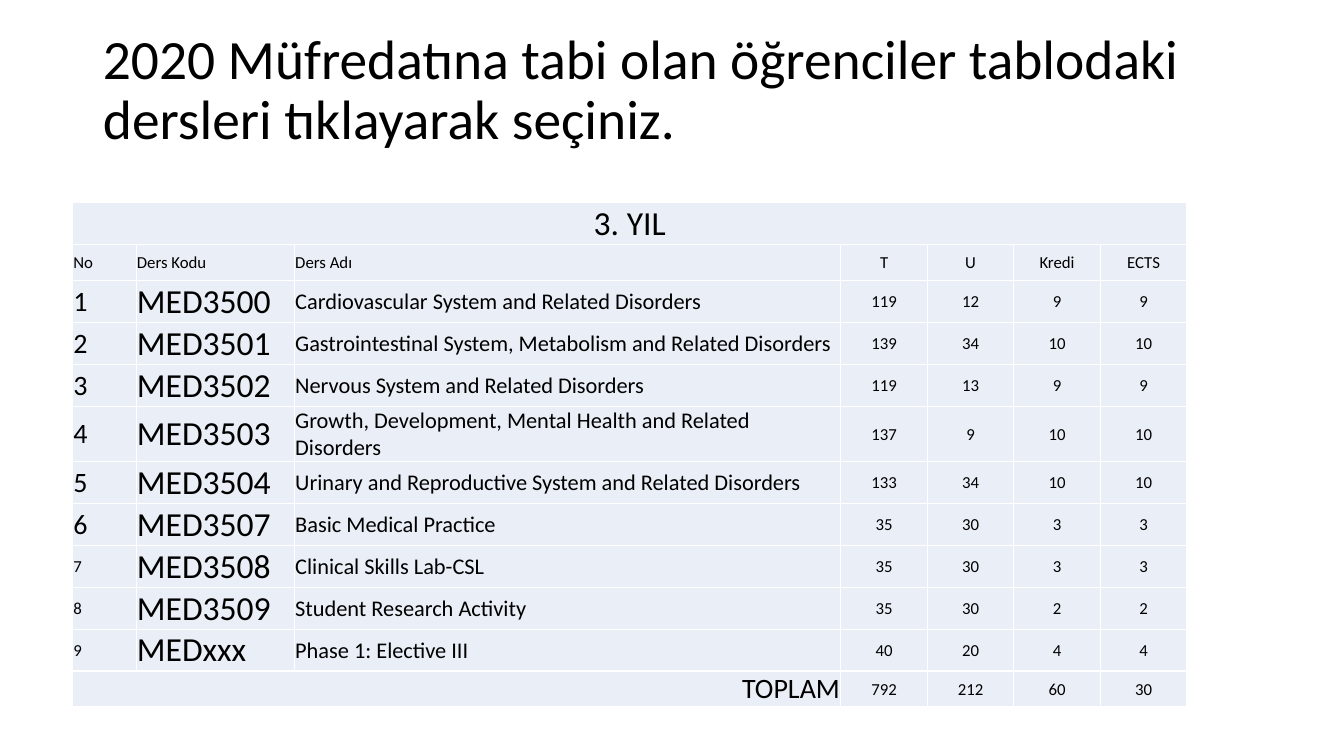
from pptx import Presentation
from pptx.dml.color import RGBColor
from pptx.enum.text import MSO_ANCHOR as ANCHOR, MSO_AUTO_SIZE as AUTO, PP_ALIGN as ALIGN
from pptx.oxml import parse_xml
from pptx.util import Cm, Pt

NS = "http://schemas.openxmlformats.org/drawingml/2006/main"

TITLE = "2020 Müfredatına tabi olan öğrenciler tablodaki dersleri tıklayarak seçiniz."
HEADER = ["No", "Ders Kodu", "Ders Adı", "T", "U", "Kredi", "ECTS"]
COURSES = [
    ("MED3500", "Cardiovascular System and Related Disorders", 119, 12, 9, 9),
    ("MED3501", "Gastrointestinal System, Metabolism and Related Disorders", 139, 34, 10, 10),
    ("MED3502", "Nervous System and Related Disorders", 119, 13, 9, 9),
    ("MED3503", "Growth, Development, Mental Health and Related Disorders", 137, 9, 10, 10),
    ("MED3504", "Urinary and Reproductive System and Related Disorders", 133, 34, 10, 10),
    ("MED3507", "Basic Medical Practice", 35, 30, 3, 3),
    ("MED3508", "Clinical Skills Lab-CSL", 35, 30, 3, 3),
    ("MED3509", "Student Research Activity", 35, 30, 2, 2),
    ("MEDxxx", "Phase 1: Elective III", 40, 20, 4, 4),
]
TOTALS = ["TOPLAM", "", "", 792, 212, 60, 30]
COL_WIDTHS = [1.6, 3.99, 13.77] + [2.18] * 4
ROW_HEIGHT = 0.91
SMALL = 12


def rgb(color):
    return RGBColor.from_string(color)


class SlideBuilder:
    font, ink, fill, border = "Calibri", "000000", "EAEFF7", "FFFFFF"

    def __init__(self, slide):
        self.s = slide

    def text(self, tf, text, size, align=ALIGN.LEFT):
        p = tf.paragraphs[0]
        p.text = str(text)
        p.alignment = align
        p.font.name = self.font
        p.font.size = Pt(size)
        p.font.color.rgb = rgb(self.ink)
        return p

    def title(self, text, left, top, width, height, size):
        sp = self.s.shapes.title
        sp.left, sp.top, sp.width, sp.height = Cm(left), Cm(top), Cm(width), Cm(height)
        tf = sp.text_frame
        tf.word_wrap = True
        tf.auto_size = AUTO.NONE
        tf.vertical_anchor = ANCHOR.MIDDLE
        self.text(tf, text, size).line_spacing = 0.9

    def table(self, left, top, widths, row_height, rows):
        frame = self.s.shapes.add_table(len(rows), len(widths), Cm(left), Cm(top),
                                        Cm(sum(widths)), Cm(row_height * len(rows)))
        table = frame.table
        table.first_row = table.horz_banding = False
        for column, width in zip(table.columns, widths):
            column.width = Cm(width)
        for row, values in zip(table.rows, rows):
            row.height = Cm(row_height)
            for cell, (text, size, align) in zip(row.cells, values):
                self.cell(cell, text, size, align)
        return table

    def cell(self, cell, text, size, align):
        cell.margin_left = cell.margin_right = cell.margin_top = Cm(0.02)
        cell.margin_bottom = 0
        cell.vertical_anchor = ANCHOR.MIDDLE
        self.text(cell.text_frame, text, size, align)
        # Borders come before the fill in the cell properties
        tc_pr = cell._tc.get_or_add_tcPr()
        for side in "LRTB":
            tc_pr.append(parse_xml(
                f'<a:ln{side} xmlns:a="{NS}" w="{Pt(1)}"><a:solidFill>'
                f'<a:srgbClr val="{self.border}"/></a:solidFill></a:ln{side}>'))
        cell.fill.solid()
        cell.fill.fore_color.rgb = rgb(self.fill)


def styled(values, sizes, aligns=(ALIGN.LEFT,) * 3):
    """Pair each value with its size and alignment; the figures are small and centred."""
    return list(zip(values, list(sizes) + [SMALL] * 4, list(aligns) + [ALIGN.CENTER] * 4))


def main():
    prs = Presentation()
    prs.slide_width, prs.slide_height = Cm(33.87), Cm(19.05)
    builder = SlideBuilder(prs.slides.add_slide(prs.slide_layouts[5]))

    # Title
    builder.title(TITLE, 2.34, 1.02, 29.21, 2.59, 39.6)

    # Course table: year, header, courses, totals
    rows = [styled(["3. YIL"] + [""] * 6, [24, SMALL, SMALL], [ALIGN.CENTER] * 3),
            styled(HEADER, [SMALL] * 3)]
    for number, course in enumerate(COURSES, 1):
        rows.append(styled([number, *course], [20 if number <= 6 else SMALL, 24, 16]))
    rows.append(styled(TOTALS, [20, SMALL, SMALL], [ALIGN.RIGHT] * 3))
    table = builder.table(1.83, 5.11, COL_WIDTHS, ROW_HEIGHT, rows)

    # Merged cells
    last = len(rows) - 1
    table.cell(0, 0).merge(table.cell(0, 6))
    table.cell(last, 0).merge(table.cell(last, 2))

    prs.save("out.pptx")


if __name__ == "__main__":
    main()
